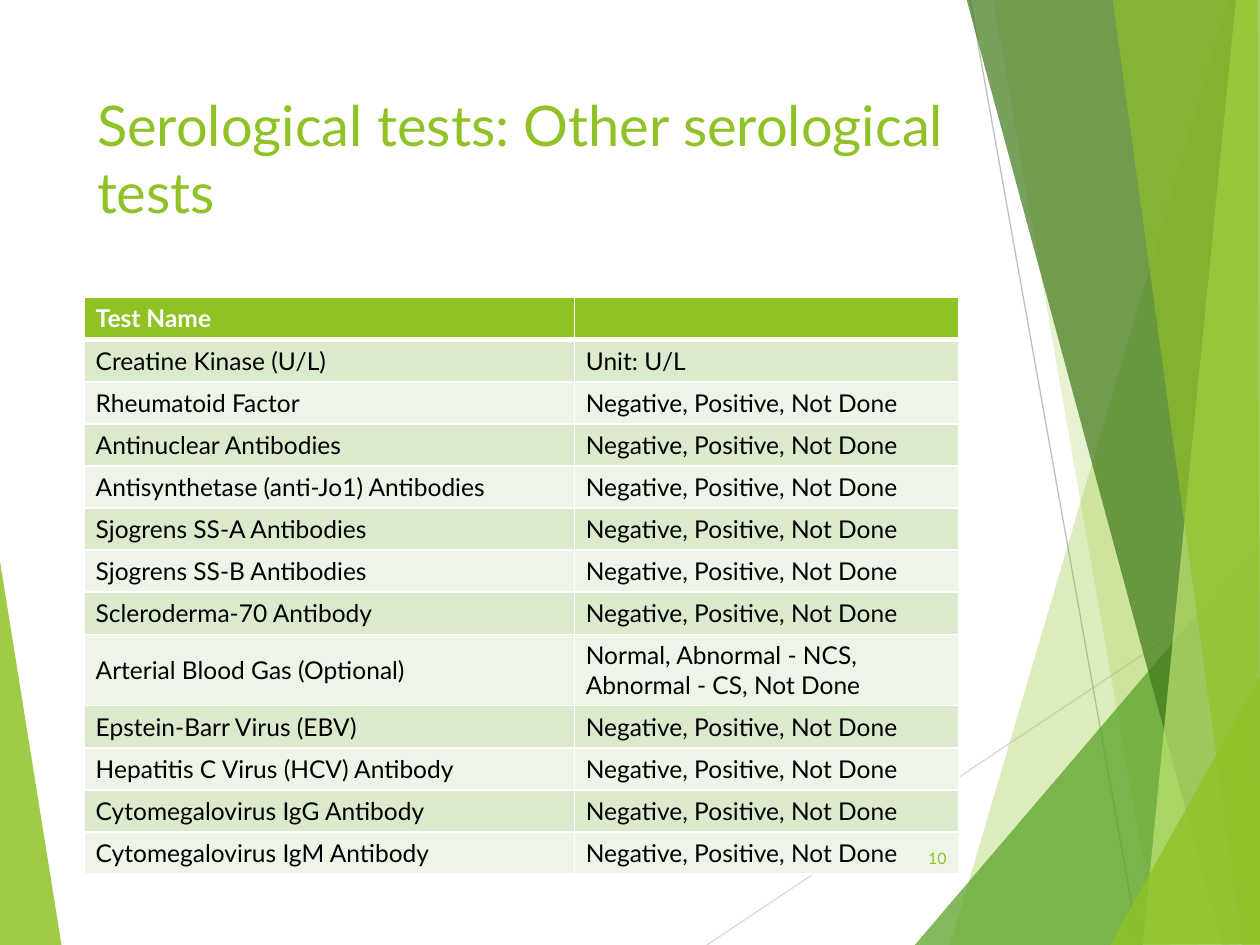
"""Build the slide that lists the other serological tests."""
from dataclasses import dataclass

from lxml.etree import SubElement
from pptx import Presentation
from pptx.dml.color import RGBColor
from pptx.enum.shapes import MSO_CONNECTOR
from pptx.enum.text import MSO_ANCHOR, PP_ALIGN
from pptx.oxml.ns import qn
from pptx.util import Inches, Pt


@dataclass(frozen=True)
class Theme:
    font: str = "Lato"
    green: str = "90C226"
    leaf: str = "54A021"
    forest: str = "3F7819"
    lime: str = "C0E474"
    pale_ray: str = "D9D9D9"
    grey_ray: str = "BFBFBF"
    dark_band: str = "DBE9CD"
    light_band: str = "EEF4E8"
    white: str = "FFFFFF"
    black: str = "000000"
    title_size: int = 32
    table_size: int = 14
    number_size: int = 9
    rule: float = 1
    header_rule: float = 3


@dataclass(frozen=True)
class Facet:
    corners: tuple
    color: str
    opacity: int


@dataclass(frozen=True)
class Ray:
    start: tuple
    end: tuple
    color: str


@dataclass(frozen=True)
class SerologyTest:
    name: str
    answers: str = "Negative, Positive, Not Done"
    height: float = 0.33


THEME = Theme()
LEFT, WIDTH = 0.67, 6.94

RAYS = (
    Ray((5.61, 7.5), (10.01, 4.57), THEME.pale_ray),
    Ray((7.7, 0), (9.04, 7.5), THEME.grey_ray),
)
LEFT_FACET = Facet(((-0.01, 4.39), (0.49, 7.51), (-0.01, 7.5)), THEME.green, 85)
RIGHT_FACETS = (
    Facet(((9.75, 0), (7.54, 7.5), (10.02, 7.51), (10.01, 0.01)), THEME.green, 30),
    Facet(((7.88, -0.01), (9.19, 7.5), (10.01, 7.5), (10.01, -0.01)), THEME.green, 20),
    Facet(((7.26, 7.5), (10, 4.29), (10.01, 7.5)), THEME.leaf, 72),
    Facet(((7.67, -0.01), (9.7, 7.5), (10.01, 7.49), (10.01, -0.01)), THEME.forest, 70),
    Facet(((9.81, -0.01), (9.07, 7.5), (10.01, 7.5), (10, -0.01)), THEME.lime, 70),
    Facet(((8.83, -0.01), (9.86, 7.5), (10, 7.5), (9.98, -0.01)), THEME.green, 65),
    Facet(((8.81, 7.5), (10.01, 5.35), (10.01, 7.49)), THEME.green, 80),
)
TESTS = (
    SerologyTest("Test Name", ""),
    SerologyTest("Creatine Kinase (U/L)", "Unit: U/L"),
    SerologyTest("Rheumatoid Factor"),
    SerologyTest("Antinuclear Antibodies"),
    SerologyTest("Antisynthetase (anti-Jo1) Antibodies"),
    SerologyTest("Sjogrens SS-A Antibodies"),
    SerologyTest("Sjogrens SS-B Antibodies"),
    SerologyTest("Scleroderma-70 Antibody"),
    SerologyTest("Arterial Blood Gas (Optional)",
                 "Normal, Abnormal - NCS, Abnormal - CS, Not Done", 0.56),
    SerologyTest("Epstein-Barr Virus (EBV)"),
    SerologyTest("Hepatitis C Virus (HCV) Antibody"),
    SerologyTest("Cytomegalovirus IgG Antibody"),
    SerologyTest("Cytomegalovirus IgM Antibody"),
)


def write_text(frame, text: str, *, size: float, color: str, bold: bool = False,
               align=PP_ALIGN.LEFT) -> None:
    paragraph = frame.paragraphs[0]
    paragraph.alignment = align
    if not text:
        SubElement(paragraph._p, qn("a:endParaRPr"), sz=str(size * 100))
        return
    run = paragraph.add_run()
    run.text = text
    run.font.name = THEME.font
    run.font.size = Pt(size)
    run.font.bold = bold
    run.font.color.rgb = RGBColor.from_string(color)


def draw_facet(slide, facet: Facet) -> None:
    start, *others = [(Inches(x), Inches(y)) for x, y in facet.corners]
    builder = slide.shapes.build_freeform(*start)
    builder.add_line_segments(others, close=True)
    pane = builder.convert_to_shape()
    pane.shadow.inherit = False
    pane.line.fill.background()
    pane.fill.solid()
    pane.fill.fore_color.rgb = RGBColor.from_string(facet.color)
    tint = pane._element.spPr.find(qn("a:solidFill"))[0]
    SubElement(tint, qn("a:alpha"), val=str(facet.opacity * 1000))


def draw_ray(slide, ray: Ray) -> None:
    ends = [Inches(length) for length in (*ray.start, *ray.end)]
    connector = slide.shapes.add_connector(MSO_CONNECTOR.STRAIGHT, *ends)
    connector.line.color.rgb = RGBColor.from_string(ray.color)
    connector.line.width = Pt(0.75)
    SubElement(connector._element.spPr, qn("a:effectLst"))


def rule_cell(cell, **widths: float) -> None:
    properties = cell._tc.get_or_add_tcPr()
    for side in ("lnL", "lnR", "lnT", "lnB"):
        width = Pt(widths.get(side, THEME.rule))
        border = SubElement(properties, qn(f"a:{side}"), w=str(int(width)))
        paint = SubElement(border, qn("a:solidFill"))
        SubElement(paint, qn("a:srgbClr"), val=THEME.white)


def draw_table(slide, tests: tuple) -> None:
    total = sum(test.height for test in tests)
    table = slide.shapes.add_table(len(tests), 2, Inches(LEFT), Inches(2.36),
                                   Inches(WIDTH), Inches(total)).table
    for column, width in zip(table.columns, (3.89, 3.05)):
        column.width = Inches(width)
    for index, test in enumerate(tests):
        table.rows[index].height = Inches(test.height)
        header = index == 0
        band = THEME.dark_band if index % 2 else THEME.light_band
        rules = {0: {"lnB": THEME.header_rule}, 1: {"lnT": THEME.header_rule}}
        for cell, text in zip(table.rows[index].cells, (test.name, test.answers)):
            rule_cell(cell, **rules.get(index, {}))
            cell.fill.solid()
            cell.fill.fore_color.rgb = RGBColor.from_string(THEME.green if header else band)
            cell.vertical_anchor = MSO_ANCHOR.TOP if header else MSO_ANCHOR.MIDDLE
            cell.margin_left = cell.margin_right = Inches(0.09)
            cell.margin_top = cell.margin_bottom = Inches(0.05)
            write_text(cell.text_frame, text, size=THEME.table_size, bold=header,
                       color=THEME.white if header else THEME.black)


def place_title(slide, text: str) -> None:
    title = slide.shapes.title
    title.left, title.top = Inches(LEFT), Inches(0.67)
    title.width, title.height = Inches(WIDTH), Inches(1.44)
    title.text_frame.vertical_anchor = MSO_ANCHOR.TOP
    write_text(title.text_frame, text, size=THEME.title_size, color=THEME.green)
    slide.shapes._spTree.append(title._element)


def draw_page_number(slide, number: str) -> None:
    page_number = slide.shapes.add_textbox(Inches(7.05), Inches(6.61), Inches(0.56), Inches(0.4))
    page_number.text_frame.word_wrap = True
    page_number.text_frame.vertical_anchor = MSO_ANCHOR.MIDDLE
    write_text(page_number.text_frame, number, size=THEME.number_size,
               color=THEME.green, align=PP_ALIGN.RIGHT)


def main() -> None:
    deck = Presentation()
    deck.slide_width, deck.slide_height = Inches(10), Inches(7.5)
    slide = deck.slides.add_slide(deck.slide_layouts[5])
    draw_facet(slide, LEFT_FACET)
    for ray in RAYS:
        draw_ray(slide, ray)
    for facet in RIGHT_FACETS:
        draw_facet(slide, facet)
    place_title(slide, "Serological tests: Other serological tests")
    draw_table(slide, TESTS)
    draw_page_number(slide, "10")
    deck.save("out.pptx")


if __name__ == "__main__":
    main()
